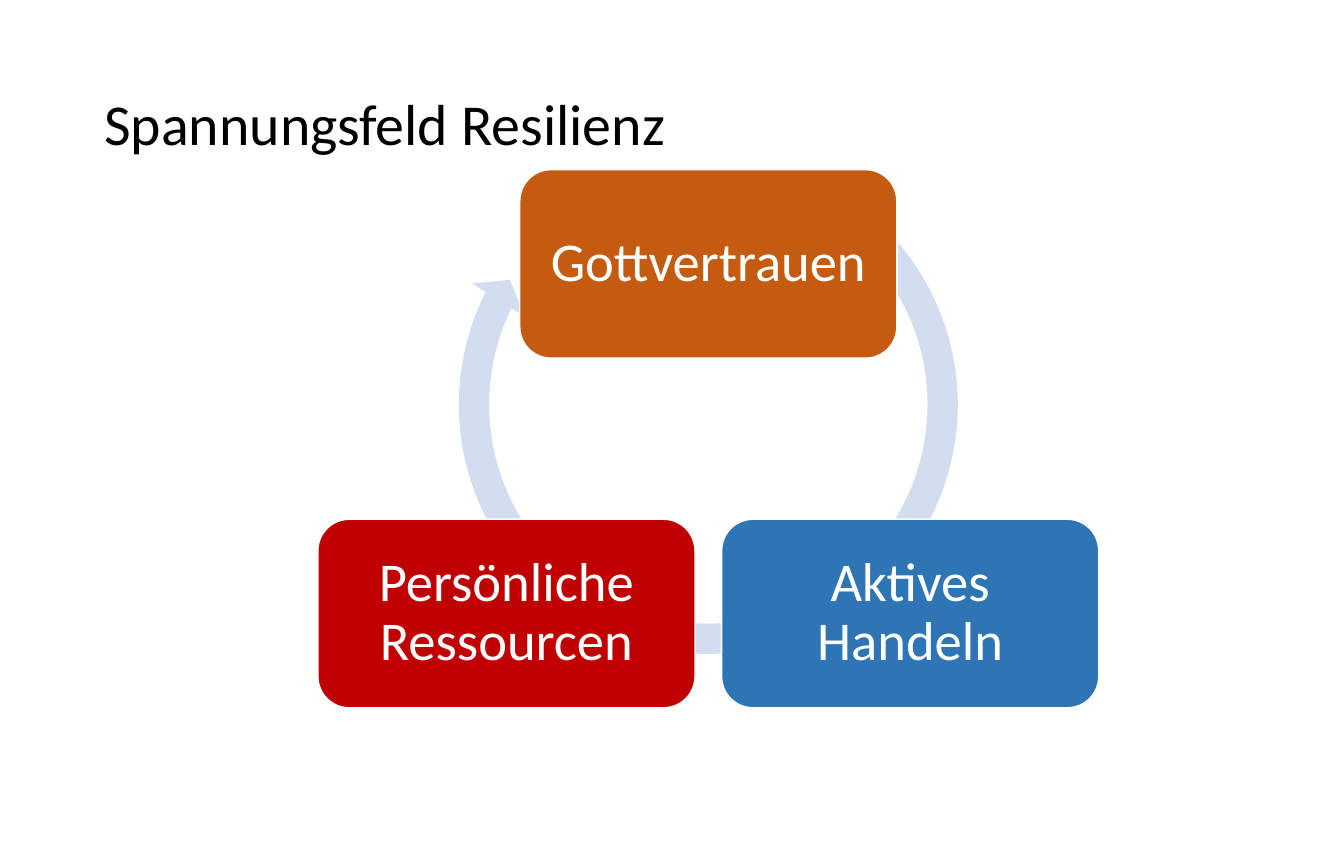
from dataclasses import dataclass
from math import cos, radians, sin

from pptx import Presentation
from pptx.dml.color import RGBColor
from pptx.enum.shapes import MSO_SHAPE
from pptx.enum.text import MSO_ANCHOR, PP_ALIGN
from pptx.util import Pt

TITLE = "Spannungsfeld Resilienz"
STEPS = [
    ("Gottvertrauen", "C55A11"),
    ("Aktives Handeln", "2E75B6"),
    ("Persönliche Ressourcen", "C00000"),
]


@dataclass(frozen=True)
class Theme:
    font: str = "Calibri"
    dark: str = "000000"
    light: str = "FFFFFF"
    ring: str = "D2DEEF"
    head: int = 36
    label: int = 34


THEME = Theme()
SLIDE = (836, 540)
HEAD = (57.6, 49.7, 753, 59)
MID = (440.6, 309.2)
ORBIT = 145
BOX = (234.7, 117.4)
RING = 330.5
RING_TOP = 86.4
BEND = (5.7, 340.5, 12387.2, 18294.6, 5.9)
INSET = 10


def color(code):
    return RGBColor.from_string(code)


def write(frame, text, size, code, align):
    frame.text = text
    frame.word_wrap = True
    frame.vertical_anchor = MSO_ANCHOR.MIDDLE
    para = frame.paragraphs[0]
    para.alignment = align
    para.line_spacing = 0.9
    para.font.name = THEME.font
    para.font.size = Pt(size)
    para.font.color.rgb = color(code)


def add(slide, kind, x, y, width, height, code):
    shape = slide.shapes.add_shape(kind, Pt(x), Pt(y), Pt(width), Pt(height))
    shape.shadow.inherit = False
    shape.fill.solid()
    shape.fill.fore_color.rgb = color(code)
    return shape


def add_title(slide):
    title = slide.shapes.title
    title.left, title.top, title.width, title.height = map(Pt, HEAD)
    write(title.text_frame, TITLE, THEME.head, THEME.dark, PP_ALIGN.LEFT)


def add_ring(slide):
    ring = add(slide, MSO_SHAPE.CIRCULAR_ARROW, MID[0] - RING / 2, RING_TOP,
               RING, RING, THEME.ring)
    ring.line.fill.background()
    for i, part in enumerate(BEND):
        ring.adjustments[i] = part / 100


def add_steps(slide):
    width, height = BOX
    for i, (text, code) in enumerate(STEPS):
        turn = radians(360 * i / len(STEPS) - 90)
        x = MID[0] + ORBIT * cos(turn) - width / 2
        y = MID[1] + ORBIT * sin(turn) - height / 2
        box = add(slide, MSO_SHAPE.ROUNDED_RECTANGLE, x, y, width, height, code)
        box.line.color.rgb = color(THEME.light)
        box.line.width = Pt(1)
        frame = box.text_frame
        frame.margin_left = frame.margin_right = Pt(INSET)
        frame.margin_top = frame.margin_bottom = Pt(INSET)
        write(frame, text, THEME.label, THEME.light, PP_ALIGN.CENTER)


def main():
    deck = Presentation()
    deck.slide_width, deck.slide_height = map(Pt, SLIDE)
    slide = deck.slides.add_slide(deck.slide_layouts[5])
    add_title(slide)
    add_ring(slide)
    add_steps(slide)
    deck.save("out.pptx")


if __name__ == "__main__":
    main()
